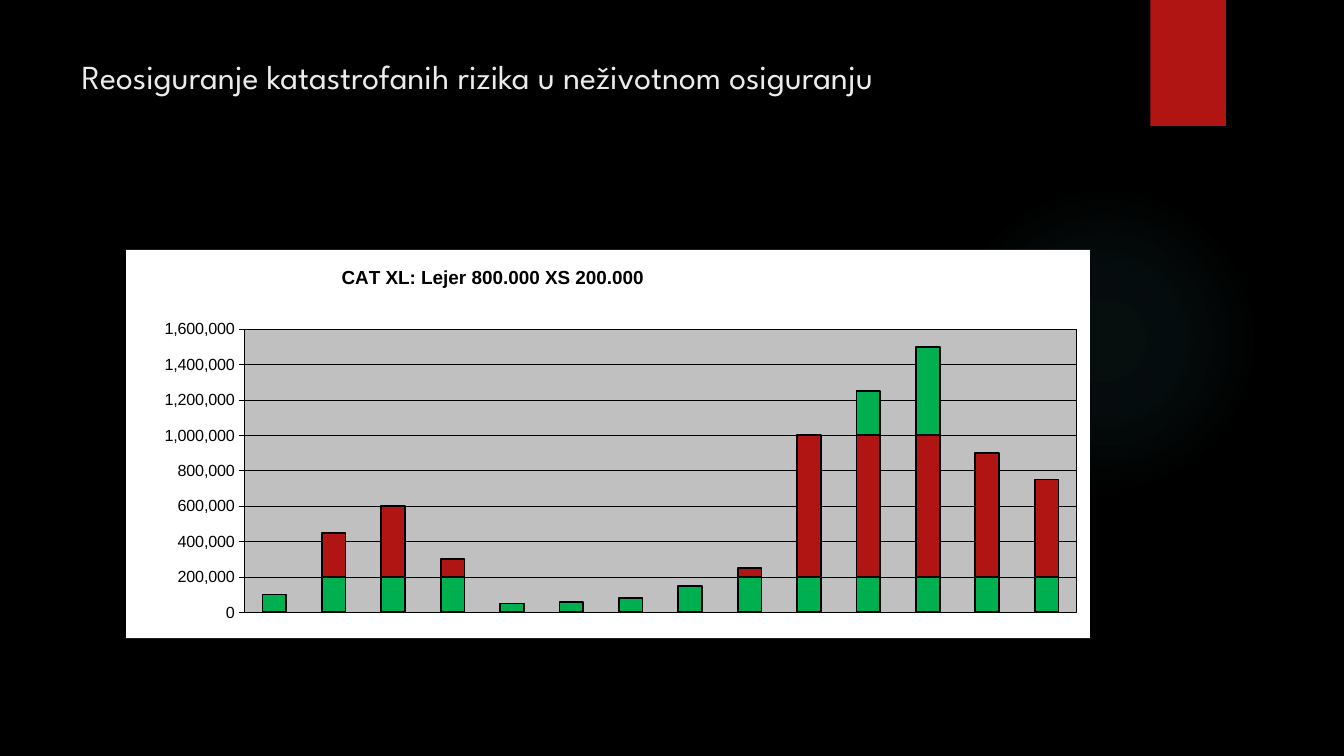
from pptx import Presentation
from pptx import util as u
from pptx.chart.data import CategoryChartData
from pptx.dml.color import RGBColor
from pptx.enum import chart as charts, shapes, text
from pptx.oxml import parse_xml

NAMESPACES = (
    'xmlns:a="http://schemas.openxmlformats.org/drawingml/2006/main" '
    'xmlns:c="http://schemas.openxmlformats.org/drawingml/2006/chart"'
)
BLACK, WHITE, GREY = "000000", "FFFFFF", "C0C0C0"
RED, GREEN, TEAL, PALE = "B01513", "00B050", "50B9C1", "EBEBEB"
RETENTION = 200000
LAYER = 800000
LOSSES = [100000, 450000, 600000, 300000, 50000, 60000, 80000, 150000,
          250000, 1000000, 1250000, 1500000, 900000, 750000]


def color(value):
    return RGBColor.from_string(value)


def element(markup):
    return parse_xml(f"<wrapper {NAMESPACES}>{markup}</wrapper>")[0]


def format_text(frame, content, size, font, fill, bold=False):
    frame.text = content
    style = frame.paragraphs[0].runs[0].font
    style.size, style.name, style.bold = u.Pt(size), font, bold
    style.color.rgb = color(fill)


def set_line(line, width, fill=BLACK):
    line.width = u.Pt(width)
    line.color.rgb = color(fill)


def manual_layout(x, y, width=None, height=None):
    target = '<c:layoutTarget val="inner"/>' if width else ""
    size = f'<c:w val="{width}"/><c:h val="{height}"/>' if width else ""
    return element(
        f'<c:layout><c:manualLayout>{target}<c:xMode val="edge"/><c:yMode val="edge"/>'
        f'<c:x val="{x}"/><c:y val="{y}"/>{size}</c:manualLayout></c:layout>')


def area_format(fill, line):
    return element(
        f'<c:spPr><a:solidFill><a:srgbClr val="{fill}"/></a:solidFill>{line}</c:spPr>')


class SlideBuilder:
    """Holds the presentation style and adds elements to the current slide."""

    def __init__(self, presentation, background):
        self.title_font, self.chart_font = "League Spartan", "Arial"
        self.slide = presentation.slides.add_slide(presentation.slide_layouts[5])
        fill = self.slide.background.fill
        fill.solid()
        fill.fore_color.rgb = color(background)

    def shape(self, kind, left, top, width, height, fill):
        shape = self.slide.shapes.add_shape(
            kind, *map(u.Inches, (left, top, width, height)))
        shape.shadow.inherit = False
        shape.fill.solid()
        shape.fill.fore_color.rgb = color(fill)
        shape.line.fill.background()
        return shape

    def glow(self, left, top, size, fill, stops):
        shape = self.shape(shapes.MSO_SHAPE.OVAL, left, top, size, size, fill)
        marks = "".join(
            f'<a:gs pos="{position * 1000}"><a:srgbClr val="{fill}">'
            f'<a:alpha val="{alpha * 1000}"/></a:srgbClr></a:gs>'
            for position, alpha in stops)
        gradient = element(
            f'<a:gradFill><a:gsLst>{marks}</a:gsLst><a:path path="circle">'
            '<a:fillToRect l="50000" t="50000" r="50000" b="50000"/></a:path></a:gradFill>')
        properties = shape.fill._xPr
        properties.replace(properties.find("{*}solidFill"), gradient)

    def ribbon(self, left, top, width, height, fill):
        shape = self.shape(shapes.MSO_SHAPE.RECTANGLE, left, top, width, height, fill)
        effects = shape.fill._xPr.find("{*}effectLst")
        effects.append(element(
            f'<a:outerShdw blurRad="{u.Pt(3)}" dist="{u.Pt(2)}" dir="5400000" '
            f'rotWithShape="0"><a:srgbClr val="{BLACK}"><a:alpha val="45000"/>'
            '</a:srgbClr></a:outerShdw>'))

    def title(self, content, left, top, width, height):
        title = self.slide.shapes.title
        title.left, title.top = u.Inches(left), u.Inches(top)
        title.width, title.height = u.Inches(width), u.Inches(height)
        frame = title.text_frame
        format_text(frame, content, 24, self.title_font, PALE)
        frame.word_wrap = True
        frame.auto_size = text.MSO_AUTO_SIZE.NONE
        frame.vertical_anchor = text.MSO_ANCHOR.TOP
        frame.paragraphs[0].alignment = text.PP_ALIGN.LEFT

    def stacked_chart(self, heading, series, left, top, width, height):
        data = CategoryChartData(number_format="#,##0")
        data.categories = [str(number + 1) for number in range(len(LOSSES))]
        for name, values, _ in series:
            data.add_series(name, values)
        chart = self.slide.shapes.add_chart(
            charts.XL_CHART_TYPE.COLUMN_STACKED,
            *map(u.Inches, (left, top, width, height)), data).chart
        chart.has_legend = False
        chart.font.size, chart.font.name = u.Pt(11.5), self.chart_font
        chart.font.color.rgb = color(BLACK)

        chart.has_title = True
        format_text(chart.chart_title.text_frame, heading, 13.5,
                    self.chart_font, BLACK, bold=True)
        chart.chart_title.include_in_layout = False

        plot = chart.plots[0]
        plot.gap_width, plot.overlap, plot.vary_by_categories = 150, 100, False
        for bars, (_, _, fill) in zip(plot.series, series):
            bars.format.fill.solid()
            bars.format.fill.fore_color.rgb = color(fill)
            bars.invert_if_negative = False
            set_line(bars.format.line, 1.21)

        chart.category_axis.visible = False
        axis = chart.value_axis
        axis.minimum_scale, axis.maximum_scale, axis.major_unit = 0, 1600000, 200000
        axis.major_tick_mark = charts.XL_TICK_MARK.OUTSIDE
        axis.tick_labels.number_format = "#,##0"
        axis.tick_labels.number_format_is_linked = False
        set_line(axis.format.line, 0.3)
        set_line(axis.major_gridlines.format.line, 0.3)
        self.arrange_chart(chart)

    def arrange_chart(self, chart):
        space = chart._chartSpace
        heading, area = space.find(".//{*}title"), space.find(".//{*}plotArea")
        for parent in (heading, area):
            for layout in parent.findall("{*}layout"):
                parent.remove(layout)
        heading.find("{*}tx").addnext(manual_layout(0.22, 0.03))
        area.insert(0, manual_layout(0.123, 0.204, 0.863, 0.73))
        border = (f'<a:ln w="{u.Pt(0.3)}"><a:solidFill><a:srgbClr val="{BLACK}"/>'
                  '</a:solidFill></a:ln>')
        area.append(area_format(GREY, border))
        space.find("{*}txPr").addprevious(
            area_format(WHITE, "<a:ln><a:noFill/></a:ln>"))


def main():
    presentation = Presentation()
    presentation.slide_width = u.Inches(13.33)
    presentation.slide_height = u.Inches(7.5)
    builder = SlideBuilder(presentation, BLACK)
    builder.glow(9.41, 1.83, 3.08, TEAL, [(0, 7), (36, 6), (69, 0)])
    builder.ribbon(11.41, 0, 0.75, 1.25, RED)
    builder.title("Reosiguranje katastrofanih rizika u neživotnom osiguranju",
                  0.71, 0.5, 10.29, 1.53)
    retained = [min(loss, RETENTION) for loss in LOSSES]
    ceded = [min(max(loss - RETENTION, 0), LAYER) for loss in LOSSES]
    excess = [max(loss - RETENTION - LAYER, 0) for loss in LOSSES]
    builder.stacked_chart(
        "CAT XL: Lejer 800.000 XS 200.000",
        [("Series 1", retained, GREEN), ("Series 2", ceded, RED),
         ("Series 3", excess, GREEN)],
        1.25, 2.48, 9.56, 3.85)
    presentation.save("out.pptx")


if __name__ == "__main__":
    main()
